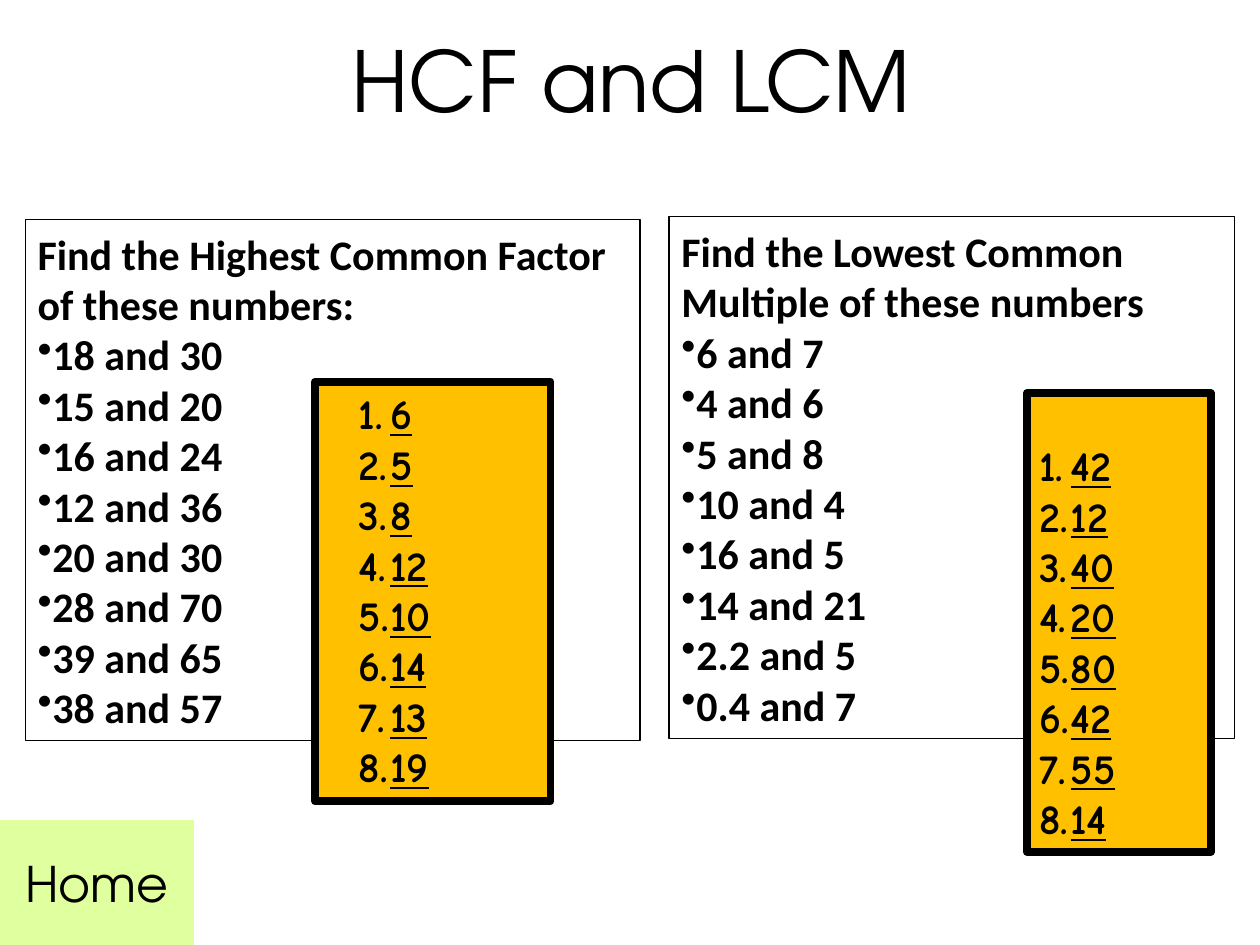
"""Build the HCF and LCM practice slide."""
from lxml.etree import SubElement
from pptx import Presentation
from pptx.dml.color import RGBColor
from pptx.enum.shapes import MSO_SHAPE
from pptx.enum.text import MSO_ANCHOR as Anchor, PP_ALIGN as Align
from pptx.oxml.ns import qn
from pptx.util import Inches, Pt

TITLE_FONT, QUESTION_FONT, ANSWER_FONT = "TeX Gyre Adventor", "Calibri", "Comic Neue"
BLACK, AMBER, LIME = "000000", "FFC000", "E0FF9E"
BULLET = ("a:buChar", {"char": "•"})
NUMBER = ("a:buAutoNum", {"type": "arabicPeriod"})

QUESTIONS = [
    ((0.2, 1.74, 4.88, 4.14), "Find the Highest Common Factor of these numbers:",
     ["18 and 30", "15 and 20", "16 and 24", "12 and 36",
      "20 and 30", "28 and 70", "39 and 65", "38 and 57"]),
    ((5.31, 1.72, 4.49, 4.14), "Find the Lowest Common Multiple of these numbers",
     ["6 and 7", "4 and 6", "5 and 8", "10 and 4",
      "16 and 5", "14 and 21", "2.2 and 5", "0.4 and 7"]),
]
ANSWERS = [
    ((8.15, 3.12, 1.46, 3.64), 0.37, 0.25, [42, 12, 40, 20, 80, 42, 55, 14]),
    ((2.5, 3.03, 1.87, 3.33), 0.05, 0.5, [6, 5, 8, 12, 10, 14, 13, 19]),
]


def rgb(value):
    return RGBColor.from_string(value)


def style(paragraph, font_name, size, bold=False, underline=None, align=Align.LEFT):
    paragraph.alignment = align
    font = paragraph.font
    font.name, font.size = font_name, Pt(size)
    font.bold, font.underline = bold, underline
    font.color.rgb = rgb(BLACK)


def mark(paragraph, marker, margin=0, indent=0):
    tag, attributes = marker
    properties = paragraph._p.get_or_add_pPr()
    properties.set("marL", str(Inches(margin)))
    properties.set("indent", str(Inches(indent)))
    SubElement(properties, qn(tag), attributes)


def add_box(slide, place, fill=None, line_width=0, anchor=Anchor.MIDDLE):
    box = slide.shapes.add_shape(MSO_SHAPE.RECTANGLE, *map(Inches, place))
    box.shadow.inherit = False
    if fill:
        box.fill.solid()
        box.fill.fore_color.rgb = rgb(fill)
    else:
        box.fill.background()
    if line_width:
        box.line.color.rgb = rgb(BLACK)
        box.line.width = Pt(line_width)
    else:
        box.line.fill.background()
    frame = box.text_frame
    frame.word_wrap = True
    frame.vertical_anchor = anchor
    return frame


def add_title(slide, text):
    title = slide.shapes.title
    title.left, title.top, title.width, title.height = map(Inches, (0.51, 0, 9, 1.25))
    title.text_frame.text = text
    title.text_frame.vertical_anchor = Anchor.MIDDLE
    style(title.text_frame.paragraphs[0], TITLE_FONT, 48, align=Align.CENTER)


def add_questions(slide, place, heading, pairs):
    frame = add_box(slide, place, line_width=0.75)
    frame.text = "\n".join([heading, *pairs])
    for pair in frame.paragraphs[1:]:
        mark(pair, BULLET)
    for paragraph in frame.paragraphs:
        style(paragraph, QUESTION_FONT, 24, bold=True)


def add_answers(slide, place, top_margin, margin, values):
    frame = add_box(slide, place, AMBER, 4.5, Anchor.TOP)
    frame.margin_top = Inches(top_margin)
    frame.text = "\n".join(map(str, values))
    for answer in frame.paragraphs:
        mark(answer, NUMBER, margin, -0.25)
        style(answer, ANSWER_FONT, 24, bold=True, underline=True)


def main():
    deck = Presentation()
    deck.slide_width, deck.slide_height = Inches(10), Inches(7.5)
    slide = deck.slides.add_slide(deck.slide_layouts[5])
    add_title(slide, "HCF and LCM")
    home = add_box(slide, (0, 6.51, 1.54, 0.99), LIME)
    home.text = "Home"
    style(home.paragraphs[0], TITLE_FONT, 28, align=Align.CENTER)
    for question in QUESTIONS:
        add_questions(slide, *question)
    for answer in ANSWERS:
        add_answers(slide, *answer)
    deck.save("out.pptx")


if __name__ == "__main__":
    main()
